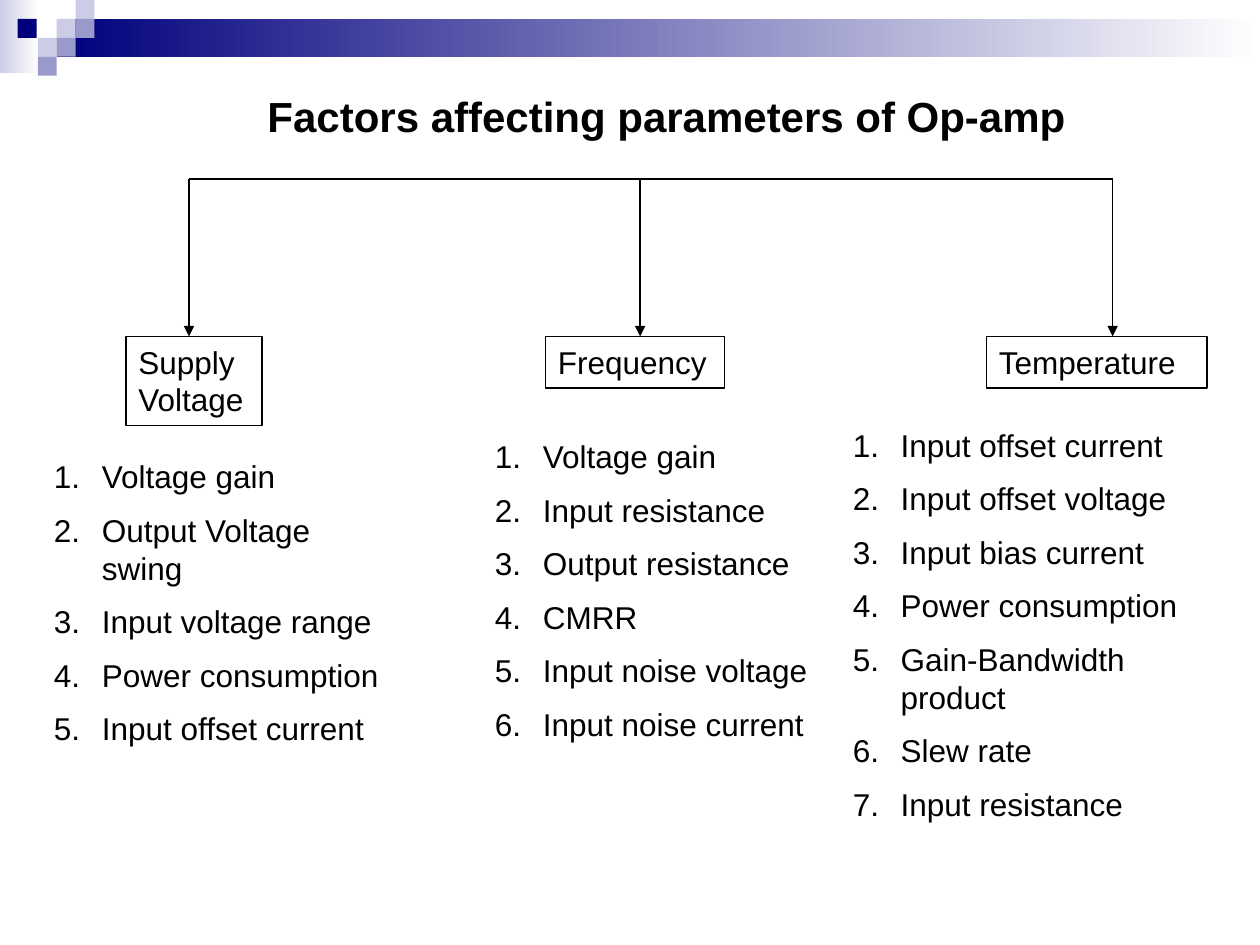
from dataclasses import dataclass

from pptx import Presentation
from pptx.dml.color import RGBColor
from pptx.enum import shapes, text
from pptx.oxml import ns
from pptx.util import Inches, Pt
from lxml import etree


@dataclass(frozen=True)
class Theme:
    font: str = "Arial"
    title_size: int = 24
    body_size: int = 18
    line_width: float = 0.75
    ink: str = "000000"
    paper: str = "FFFFFF"
    navy: str = "00007D"
    lavender: str = "CCCCE6"
    periwinkle: str = "9999CC"


THEME = Theme()
TILE = 0.15
BRANCH_TOP, BRANCH_BOTTOM = 1.42, 2.67

# heading, heading box (left, width, height), arrow x, list (left, top, width, height), items
FACTORS = [
    ("Supply Voltage", (1, 1.08, 0.71), 1.5, (0.33, 3.58, 2.92, 2.61),
     ["Voltage gain", "Output Voltage swing", "Input voltage range",
      "Power consumption", "Input offset current"]),
    ("Frequency", (4.33, 1.42, 0.41), 5.08, (3.83, 3.42, 2.92, 2.77),
     ["Voltage gain", "Input resistance", "Output resistance", "CMRR",
      "Input noise voltage", "Input noise current"]),
    ("Temperature", (7.83, 1.75, 0.41), 8.83, (6.67, 3.33, 3.08, 3.55),
     ["Input offset current", "Input offset voltage", "Input bias current",
      "Power consumption", "Gain-Bandwidth product", "Slew rate",
      "Input resistance"]),
]


def color(value):
    return RGBColor.from_string(value)


def add_block(slide, box, *fills):
    """Add a borderless rectangle; two fills make a left-to-right gradient."""
    block = slide.shapes.add_shape(shapes.MSO_SHAPE.RECTANGLE, *map(Inches, box))
    block.shadow.inherit = False
    block.line.fill.background()
    if len(fills) == 1:
        block.fill.solid()
        block.fill.fore_color.rgb = color(fills[0])
    else:
        block.fill.gradient()
        block.fill.gradient_angle = 0
        for stop, value, position in zip(block.fill.gradient_stops, fills, (0, 1)):
            stop.color.rgb = color(value)
            stop.position = position


def number_paragraph(paragraph):
    properties = paragraph._p.get_or_add_pPr()
    properties.set("marL", str(Inches(0.38)))
    properties.set("indent", str(-Inches(0.38)))
    numbering = etree.SubElement(properties, ns.qn("a:buAutoNum"))
    numbering.set("type", "arabicPeriod")


def add_text(slide, box, lines, size=THEME.body_size, bold=False,
             align=text.PP_ALIGN.LEFT, numbered=False, outlined=False):
    label = slide.shapes.add_textbox(*map(Inches, box))
    if outlined:
        label.line.color.rgb = color(THEME.ink)
        label.line.width = Pt(THEME.line_width)
    frame = label.text_frame
    frame.word_wrap = True
    frame.auto_size = text.MSO_AUTO_SIZE.SHAPE_TO_FIT_TEXT
    for index, line in enumerate(lines):
        paragraph = frame.add_paragraph() if index else frame.paragraphs[0]
        paragraph.alignment = align
        if index:
            paragraph.space_before = Pt(size / 2)
        if numbered:
            number_paragraph(paragraph)
        run = paragraph.add_run()
        run.text = line
        run.font.name = THEME.font
        run.font.size = Pt(size)
        run.font.bold = bold
        run.font.color.rgb = color(THEME.ink)


def add_line(slide, start, end, arrow=False):
    line = slide.shapes.add_connector(
        shapes.MSO_CONNECTOR.STRAIGHT, *map(Inches, (*start, *end)))
    line.line.color.rgb = color(THEME.ink)
    line.line.width = Pt(THEME.line_width)
    if arrow:
        head = etree.SubElement(line.line._get_or_add_ln(), ns.qn("a:tailEnd"))
        head.set("type", "triangle")
    etree.SubElement(line._element.spPr, ns.qn("a:effectLst"))


def add_header(slide):
    add_block(slide, (0, 0, 0.31, 0.58), THEME.lavender, THEME.paper)
    add_block(slide, (0.45, 0.15, 9.55, 0.3), THEME.navy, THEME.paper)
    tiles = [
        (0.45, 0.15, THEME.lavender), (0.6, 0, THEME.lavender),
        (0.6, 0.15, THEME.periwinkle), (0.3, 0.3, THEME.lavender),
        (0.14, 0.15, THEME.navy), (0.45, 0.3, THEME.periwinkle),
        (0.3, 0.45, THEME.periwinkle),
    ]
    for left, top, fill in tiles:
        add_block(slide, (left, top, TILE, TILE), fill)


def add_factor(slide, heading, heading_box, arrow_x, list_box, items):
    left, width, height = heading_box
    add_line(slide, (arrow_x, BRANCH_TOP), (arrow_x, BRANCH_BOTTOM), arrow=True)
    add_text(slide, (left, BRANCH_BOTTOM, width, height), [heading], outlined=True)
    add_text(slide, list_box, items, numbered=True)


def main():
    deck = Presentation()
    deck.slide_width, deck.slide_height = Inches(10), Inches(7.5)
    slide = deck.slides.add_slide(deck.slide_layouts[6])
    slide.background.fill.solid()
    slide.background.fill.fore_color.rgb = color(THEME.paper)

    add_header(slide)
    add_text(slide, (0.83, 0.67, 8.92, 0.54),
             ["Factors affecting parameters of Op-amp"],
             size=THEME.title_size, bold=True, align=text.PP_ALIGN.CENTER)
    arrows = [factor[2] for factor in FACTORS]
    add_line(slide, (arrows[0], BRANCH_TOP), (arrows[-1], BRANCH_TOP))
    for factor in FACTORS:
        add_factor(slide, *factor)
    deck.save("out.pptx")


if __name__ == "__main__":
    main()
